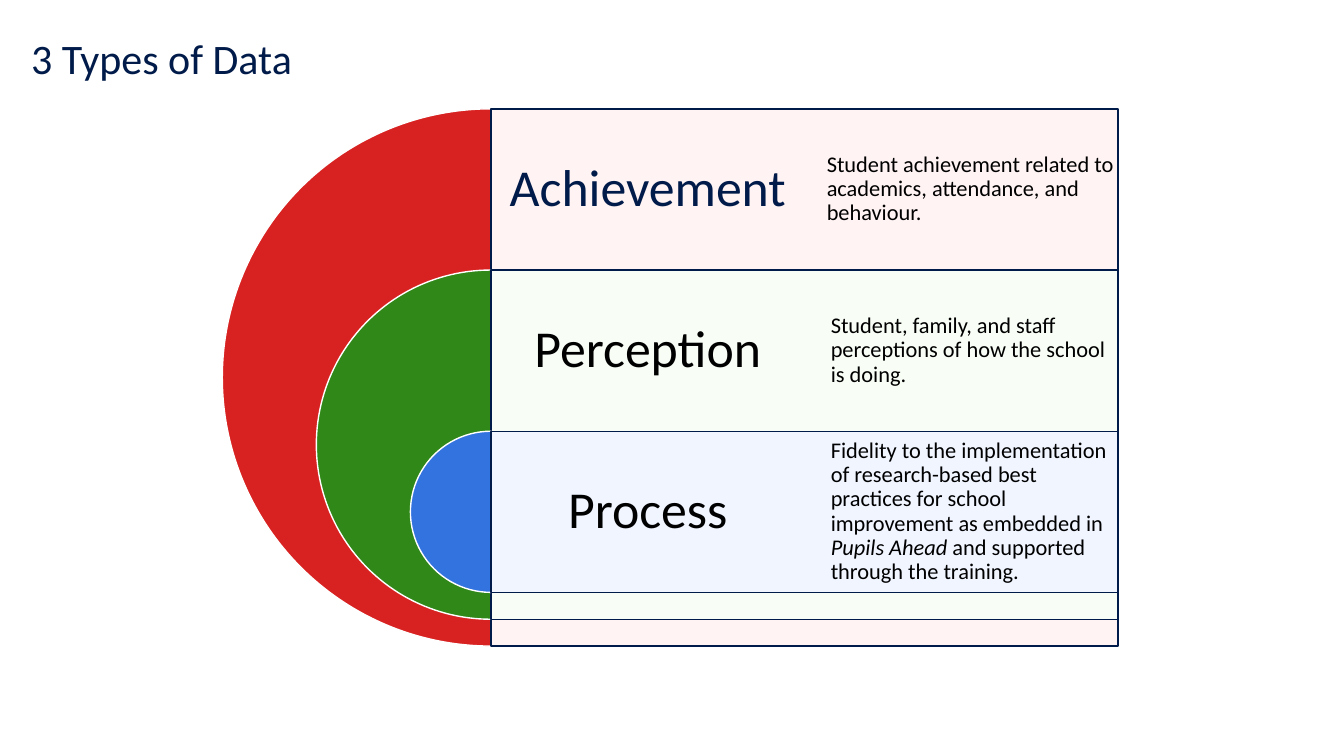
from pptx import Presentation
from pptx.dml.color import RGBColor
from pptx.enum.shapes import MSO_SHAPE
from pptx.enum.text import MSO_ANCHOR, PP_ALIGN
from pptx.util import Inches, Pt

COLORS = {
    "navy": "001B49", "black": "000000", "white": "FFFFFF",
    "red": "D72221", "pale_red": "FFF3F3",
    "green": "308819", "pale_green": "F8FEF6",
    "blue": "3373DF", "pale_blue": "F0F5FF",
}
FONT = "Calibri"

# Label, label color, disc color, band color, description left shift, description runs (text, italic)
LAYERS = [
    ("Achievement", "navy", "red", "pale_red", -0.04,
     [("Student achievement related to academics, attendance, and behaviour.", False)]),
    ("Perception", "black", "green", "pale_green", 0,
     [("Student, family, and staff perceptions of how the school is doing.", False)]),
    ("Process", "black", "blue", "pale_blue", 0,
     [("Fidelity to the implementation of research-based best practices for school "
       "improvement as embedded in ", False),
      ("Pupils Ahead ", True),
      ("and supported through the training.", False)]),
]


def color(name):
    return RGBColor.from_string(COLORS[name])


def add_text(slide, box, runs, size, color_name="black", align=PP_ALIGN.LEFT,
             anchor=MSO_ANCHOR.MIDDLE, inset=0.07, indent=0, line_spacing=None):
    shape = slide.shapes.add_textbox(*(Inches(length) for length in box))
    frame = shape.text_frame
    frame.word_wrap = True
    frame.vertical_anchor = anchor
    frame.margin_left = Inches(inset + indent)
    frame.margin_right = frame.margin_top = frame.margin_bottom = Inches(inset)
    paragraph = frame.paragraphs[0]
    paragraph.alignment = align
    paragraph.line_spacing = line_spacing
    for text, italic in runs:
        run = paragraph.add_run()
        run.text = text
        run.font.name = FONT
        run.font.size = Pt(size)
        run.font.italic = italic
        run.font.color.rgb = color(color_name)
    return shape


def add_outlined(slide, kind, box, fill, line):
    shape = slide.shapes.add_shape(kind, *(Inches(length) for length in box))
    shape.shadow.inherit = False
    shape.fill.solid()
    shape.fill.fore_color.rgb = color(fill)
    shape.line.color.rgb = color(line)
    shape.line.width = Pt(1)
    return shape


def add_title(slide, box):
    add_text(slide, box, [("3 Types of Data", False)], 30, "navy",
             anchor=MSO_ANCHOR.TOP, inset=0.1)


def add_nested_layers(slide, left, top, width, height):
    """Half discs centered on the left edge of the box, with bands to its right."""
    row_height = 0.3 * height
    column_width = width / 2
    for index, (label, label_color, disc, band, shift, description) in enumerate(LAYERS):
        row_top = top + index * row_height
        diameter = height * (1 - 0.35 * index)

        # Half disc
        half_disc = add_outlined(slide, MSO_SHAPE.PIE,
                                 (left - diameter / 2, row_top, diameter, diameter),
                                 disc, "white")
        half_disc.adjustments[0] = 54
        half_disc.adjustments[1] = 162

        # Band with label and description
        add_outlined(slide, MSO_SHAPE.RECTANGLE, (left, row_top, width, diameter), band, "navy")
        add_text(slide, (left, row_top, column_width, row_height), [(label, False)], 37,
                 label_color, align=PP_ALIGN.CENTER, inset=0.15, line_spacing=0.9)
        add_text(slide, (left + column_width + shift, row_top, column_width - 2 * shift, row_height),
                 description, 16, indent=0.19, line_spacing=0.9)


def main():
    presentation = Presentation()
    presentation.slide_width = Inches(13.33)
    presentation.slide_height = Inches(7.5)
    slide = presentation.slides.add_slide(presentation.slide_layouts[6])
    add_title(slide, (0.21, 0.22, 6.65, 0.61))
    add_nested_layers(slide, 4.87, 1.08, 6.22, 5.33)
    presentation.save("out.pptx")


if __name__ == "__main__":
    main()
